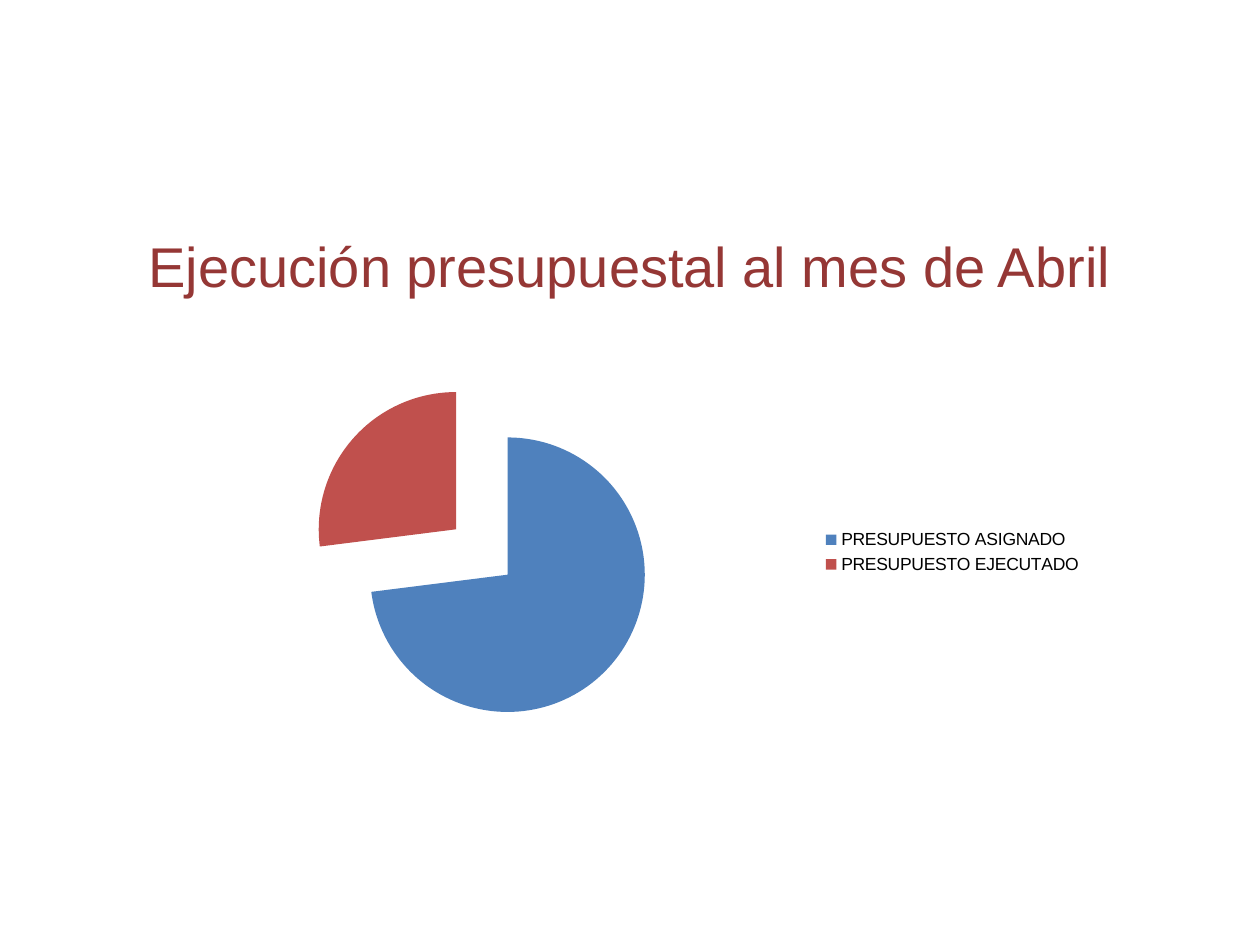
import pptx
import pptx.chart.data
import pptx.dml.color
import pptx.enum.chart
import pptx.enum.text
import pptx.oxml
import pptx.util
from pptx.util import Pt

FONT = "Arial"
BUDGET = {
    "PRESUPUESTO ASIGNADO": (73, "4F81BD"),
    "PRESUPUESTO EJECUTADO": (27, "C0504D"),
}
EXPLOSION = 25


def set_color(target, value):
    target.rgb = pptx.dml.color.RGBColor.from_string(value)


def place_title(slide, left, top, width, height):
    title = slide.shapes.title
    title.left, title.top, title.width, title.height = left, top, width, height
    text_frame = title.text_frame
    text_frame.text = "Ejecución presupuestal al mes de Abril"
    text_frame.word_wrap = True
    text_frame.vertical_anchor = pptx.enum.text.MSO_ANCHOR.MIDDLE
    paragraph = text_frame.paragraphs[0]
    paragraph.alignment = pptx.enum.text.PP_ALIGN.CENTER
    font = paragraph.runs[0].font
    font.name, font.size = FONT, Pt(32)
    set_color(font.color, "953735")


def add_budget_pie(slide, left, top, width, height):
    data = pptx.chart.data.CategoryChartData()
    data.categories = list(BUDGET)
    data.add_series("Series 1", [value for value, color in BUDGET.values()])
    chart = slide.shapes.add_chart(
        pptx.enum.chart.XL_CHART_TYPE.PIE, left, top, width, height, data
    ).chart
    chart.has_title = False
    chart.font.name, chart.font.size = FONT, Pt(10)
    set_color(chart.font.color, "000000")

    # Legend
    chart.has_legend = True
    chart.legend.position = pptx.enum.chart.XL_LEGEND_POSITION.RIGHT
    chart.legend.include_in_layout = False

    # Slice colours
    plot = chart.plots[0]
    plot.vary_by_categories = True
    series = plot.series[0]
    for index, (value, color) in enumerate(BUDGET.values()):
        fill = series.points[index].format.fill
        fill.solid()
        set_color(fill.fore_color, color)

    # Slices pulled apart
    explosion = pptx.oxml.parse_xml(
        '<c:explosion xmlns:c="http://schemas.openxmlformats.org/drawingml/2006/chart"'
        f' val="{EXPLOSION}"/>'
    )
    series._element.xpath("c:dPt")[0].addprevious(explosion)


def main():
    presentation = pptx.Presentation()
    presentation.slide_width, presentation.slide_height = Pt(720), Pt(540)
    slide = presentation.slides.add_slide(presentation.slide_layouts[5])
    add_budget_pie(slide, Pt(82), Pt(207.5), Pt(543.5), Pt(216))
    place_title(slide, Pt(36), Pt(106.5), Pt(648), Pt(90))
    presentation.save("out.pptx")


if __name__ == "__main__":
    main()
